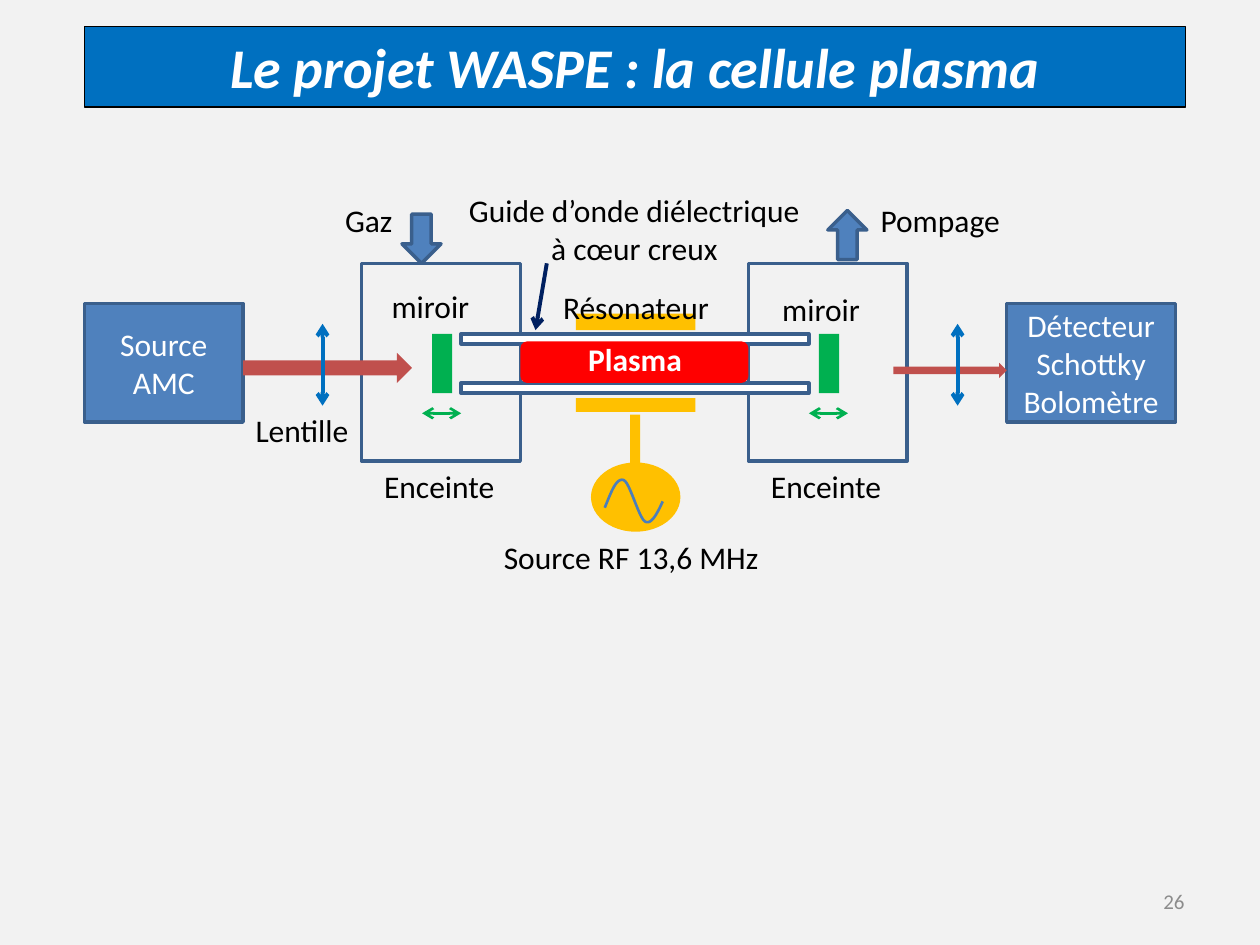
from pptx import Presentation
from pptx.dml.color import RGBColor
from pptx.enum.shapes import MSO_CONNECTOR, MSO_SHAPE
from pptx.enum.text import MSO_ANCHOR, PP_ALIGN
from pptx.oxml.ns import qn
from pptx.util import Inches, Pt
from lxml.etree import SubElement


def color(code):
    return RGBColor.from_string(code)


class Board:
    font = "Calibri"
    blue = "4F81BD"
    edge = "3A5F8C"
    red = "C0504D"
    green = "00B050"
    gold = "FFC000"
    lens = "0070C0"
    white = "FFFFFF"

    def __init__(self, deck):
        self.slide = deck.slides.add_slide(deck.slide_layouts[6])
        fill = self.slide.background.fill
        fill.solid()
        fill.fore_color.rgb = color("F2F2F2")

    def paint(self, item, fill=None, line=None, width=2):
        item.shadow.inherit = False
        if fill:
            item.fill.solid()
            item.fill.fore_color.rgb = color(fill)
        else:
            item.fill.background()
        if line:
            item.line.color.rgb = color(line)
            item.line.width = Pt(width)
        else:
            item.line.fill.background()

    def letter(self, item, text, size=18, tint="000000", align=PP_ALIGN.LEFT,
               anchor=MSO_ANCHOR.TOP, bold=False, italic=False):
        frame = item.text_frame
        frame.word_wrap = True
        frame.vertical_anchor = anchor
        frame.text = text
        for para in frame.paragraphs:
            para.alignment = align
            for run in para.runs:
                run.font.name = self.font
                run.font.size = Pt(size)
                run.font.bold = bold
                run.font.italic = italic
                run.font.color.rgb = color(tint)

    def shape(self, kind, left, top, width, height, fill=None, line=None, thick=2):
        item = self.slide.shapes.add_shape(
            kind, Inches(left), Inches(top), Inches(width), Inches(height))
        self.paint(item, fill, line, thick)
        return item

    def rect(self, *args, **opts):
        return self.shape(MSO_SHAPE.RECTANGLE, *args, **opts)

    def device(self, text, left, width):
        item = self.rect(left, 2.41, width, 0.94, fill=self.blue, line=self.edge)
        self.letter(item, text, tint=self.white, align=PP_ALIGN.CENTER,
                    anchor=MSO_ANCHOR.MIDDLE)

    def label(self, text, left, top, width, height=0.4, **style):
        item = self.slide.shapes.add_textbox(
            Inches(left), Inches(top), Inches(width), Inches(height))
        self.letter(item, text, **style)

    def arrow(self, start, end, tint, width, both=True):
        item = self.slide.shapes.add_connector(
            MSO_CONNECTOR.STRAIGHT, *map(Inches, start + end))
        item.line.color.rgb = color(tint)
        item.line.width = Pt(width)
        line = item._element.spPr.find(qn("a:ln"))
        for tag in ["a:headEnd", "a:tailEnd"] if both else ["a:tailEnd"]:
            SubElement(line, qn(tag)).set("type", "arrow")
        SubElement(item._element.spPr, qn("a:effectLst"))

    def wave(self, start, curves, tint, width, steps=12):
        points = []
        last = start
        for one, two, end in curves:
            for step in range(1, steps + 1):
                t = step / steps
                u = 1 - t
                points.append(tuple(
                    Inches(u**3 * a + 3 * u * u * t * b + 3 * u * t * t * c + t**3 * d)
                    for a, b, c, d in zip(last, one, two, end)))
            last = end
        pen = self.slide.shapes.build_freeform(*map(Inches, start))
        pen.add_line_segments(points, close=False)
        self.paint(pen.convert_to_shape(), line=tint, width=width)


def main():
    deck = Presentation()
    deck.slide_width = Inches(10)
    deck.slide_height = Inches(7.5)
    board = Board(deck)

    title = board.rect(0.67, 0.21, 8.74, 0.64, fill=board.lens, line="000000", thick=0.75)
    board.letter(title, "Le projet WASPE : la cellule plasma", size=32,
                 tint=board.white, align=PP_ALIGN.CENTER, bold=True, italic=True)
    board.label("26", 7.17, 6.95, 2.33, size=12, tint="8C8C8C",
                align=PP_ALIGN.RIGHT, anchor=MSO_ANCHOR.MIDDLE)

    board.device("Source\nAMC", 0.67, 1.26)
    board.device("Détecteur\nSchottky\nBolomètre", 7.99, 1.34)
    for left in (5.94, 2.87):
        board.rect(left, 2.09, 1.26, 1.57, line=board.edge)
    for top in (2.65, 3.04):
        board.rect(3.66, top, 2.76, 0.08, fill=board.white, line=board.edge)

    for left, top, turn in ((3.19, 1.7, 0), (6.57, 1.67, 180)):
        flow = board.shape(MSO_SHAPE.DOWN_ARROW, left, top, 0.31, 0.39,
                           fill=board.blue, line=board.edge)
        flow.rotation = turn
    for beam in ((1.93, 2.8, 1.34, 0.24), (7.09, 2.88, 0.9, 0.12)):
        board.shape(MSO_SHAPE.RIGHT_ARROW, *beam, fill=board.red)

    for left in (3.43, 6.5):
        board.rect(left, 2.65, 0.16, 0.47, fill=board.green)
        board.arrow((left - 0.08, 3.28), (left + 0.23, 3.28), board.green, 1.5)

    for part in ((4.57, 2.49, 0.95, 0.13), (4.57, 3.16, 0.95, 0.11), (5, 3.29, 0.08, 0.77)):
        board.rect(*part, fill=board.gold)
    board.shape(MSO_SHAPE.OVAL, 4.69, 3.67, 0.71, 0.55, fill=board.gold)
    board.wave((4.8, 4.03), [
        ((4.85, 3.91), (4.89, 3.79), (4.95, 3.81)),
        ((5, 3.83), (5.07, 4.11), (5.12, 4.14)),
        ((5.17, 4.17), (5.22, 4.07), (5.26, 3.98)),
    ], "4B7EBC", 1.5)
    board.shape(MSO_SHAPE.ROUNDED_RECTANGLE, 4.13, 2.71, 1.81, 0.33, fill="FF0000")
    board.label("Plasma", 4.57, 2.65, 0.95, tint=board.white, bold=True)

    for left in (2.56, 7.6):
        board.arrow((left, 2.57), (left, 3.22), board.lens, 2.25)
    board.label("Guide d’onde diélectrique à cœur creux", 3.58, 1.47, 2.91, 0.71,
                align=PP_ALIGN.CENTER)
    board.arrow((4.34, 2.09), (4.25, 2.62), "002060", 2.25, both=False)

    for text, left, top, width in (
        ("Source RF 13,6 MHz", 3.9, 4.22, 2.52),
        ("Gaz", 2.64, 1.55, 0.67),
        ("Pompage", 6.89, 1.55, 1.26),
        ("Lentille", 1.93, 3.21, 1.14),
        ("miroir", 3.01, 2.23, 0.94),
        ("miroir", 6.11, 2.25, 0.94),
        ("Enceinte", 2.95, 3.66, 1.1),
        ("Enceinte", 6.02, 3.66, 1.1),
        ("Résonateur", 4.37, 2.24, 1.42),
    ):
        board.label(text, left, top, width)

    deck.save("out.pptx")


if __name__ == "__main__":
    main()
